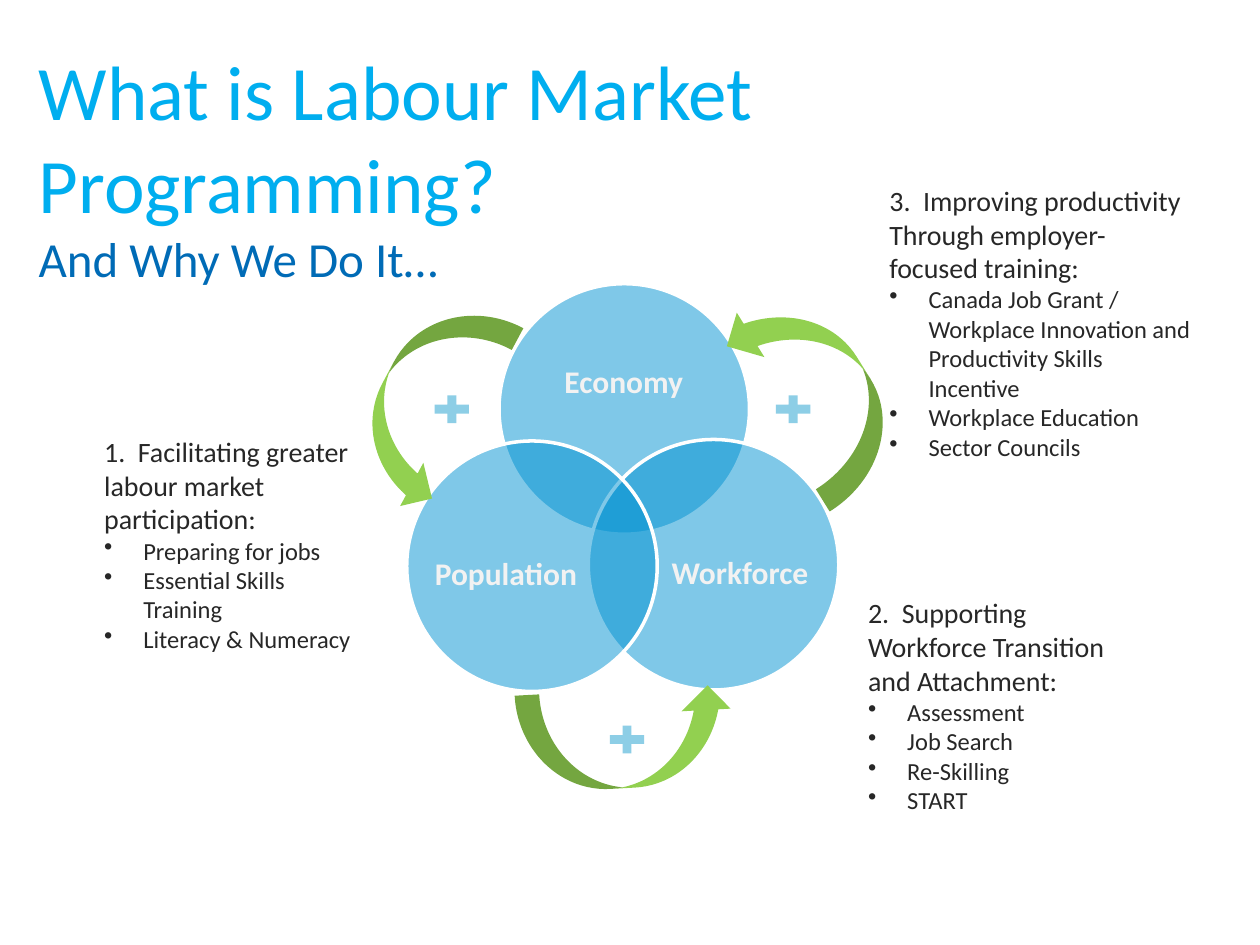
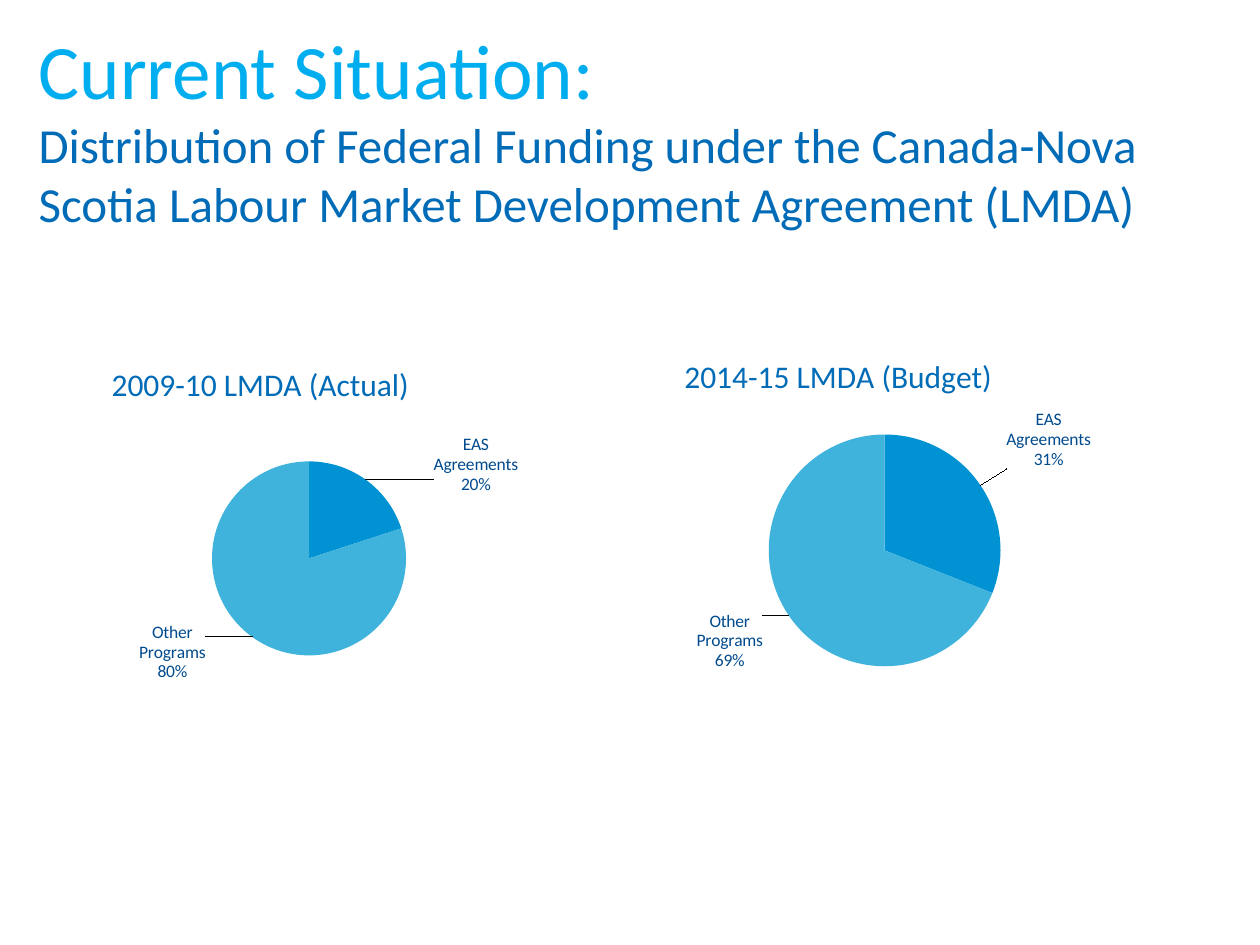
from dataclasses import dataclass

from pptx import Presentation
from pptx import util as u
from pptx.chart.data import CategoryChartData
from pptx.dml.color import RGBColor
from pptx.enum import chart as charts, shapes, text
from pptx.oxml import parse_xml
from pptx.oxml.ns import nsdecls, qn


@dataclass(frozen=True)
class Theme:
    font: str = "Calibri"
    title: str = "00AEEF"
    sub: str = "006BB6"
    body: str = "272727"
    pale: str = "F2F2F2"
    white: str = "FFFFFF"
    disc: str = "0092D2"
    arrow: str = "92D050"
    plus: str = "8DCEE6"
    label: str = "004B8E"
    slices: tuple = ("0092D2", "40B3DC")
    title_size: int = 44
    sub_size: int = 28
    head_size: int = 18
    lead_size: int = 16
    item_size: int = 14
    label_size: int = 10


T = Theme()


def lengths(*values):
    return [u.Cm(value) for value in values]


def style(font, size, color, bold=False):
    font.name, font.size, font.bold = T.font, u.Pt(size), bold
    font.color.rgb = RGBColor.from_string(color)


def say(para, words, size=T.item_size, color=T.body, bold=False, align=None,
        spacing=None, bullet=False):
    """Add a run to a paragraph and format both."""
    if bullet:
        props = para._p.get_or_add_pPr()
        indent = u.Cm(0.79)
        props.set("marL", str(indent))
        props.set("indent", str(-indent))
        props.append(parse_xml(f'<a:buChar {nsdecls("a")} char="•"/>'))
    run = para.add_run()
    run.text = words
    style(run.font, size, color, bold)
    if align is not None:
        para.alignment = align
    if spacing:
        para.line_spacing = spacing


def add_box(slide, *place):
    frame = slide.shapes.add_textbox(*lengths(*place)).text_frame
    frame.word_wrap = True
    return frame


def add_title(slide, place, main_text, sub_text):
    para = add_box(slide, *place).paragraphs[0]
    say(para, main_text, size=T.title_size, color=T.title)
    para.add_line_break()
    say(para, sub_text, size=T.sub_size, color=T.sub)


def add_form(slide, kind, place, color, turn=0):
    form = slide.shapes.add_shape(kind, *lengths(*place))
    form.shadow.inherit = False
    form.fill.solid()
    form.fill.fore_color.rgb = RGBColor.from_string(color)
    form.line.fill.background()
    form.rotation = turn
    return form


def add_disc(slide, left, top):
    """Add a half-transparent circle with a white rim."""
    size = 5.05
    disc = add_form(slide, shapes.MSO_SHAPE.OVAL, (left, top, size, size), T.disc)
    tint = disc._element.spPr.find(qn("a:solidFill"))[0]
    tint.append(parse_xml(f'<a:alpha {nsdecls("a")} val="50000"/>'))
    disc.line.color.rgb = RGBColor.from_string(T.white)
    disc.line.width = u.Pt(2)


def add_label(slide, words, place):
    frame = add_box(slide, *place)
    frame.margin_left = frame.margin_right = 0
    frame.margin_top = frame.margin_bottom = 0
    frame.vertical_anchor = text.MSO_ANCHOR.MIDDLE
    say(frame.paragraphs[0], words, size=T.head_size, color=T.pale, bold=True,
        align=text.PP_ALIGN.CENTER, spacing=0.9)


def add_list(slide, place, leads, items):
    frame = add_box(slide, *place)
    frame.auto_size = text.MSO_AUTO_SIZE.SHAPE_TO_FIT_TEXT
    for index, words in enumerate(leads + items):
        para = frame.add_paragraph() if index else frame.paragraphs[0]
        if index < len(leads):
            say(para, words, size=T.lead_size)
        else:
            say(para, words, bullet=True)


def layout_xml(**parts):
    inner = "".join(f'<c:{key} val="{val}"/>' for key, val in parts.items())
    return (f'<c:layout {nsdecls("c")}><c:manualLayout>{inner}'
            '</c:manualLayout></c:layout>')


def set_layout(parent, index, **parts):
    old = parent.find(qn("c:layout"))
    if old is not None:
        parent.remove(old)
    parent.insert(index, parse_xml(layout_xml(**parts)))


def label_xml(shifts):
    """Labels outside the pie, each moved by a share of the chart's size."""
    show = ('<c:dLblPos val="outEnd"/><c:showLegendKey val="0"/><c:showVal val="0"/>'
            '<c:showCatName val="1"/><c:showSerName val="0"/><c:showPercent val="1"/>'
            '<c:showBubbleSize val="0"/><c:separator>\n</c:separator>')
    form = '<c:numFmt formatCode="0%" sourceLinked="0"/>'
    moved = "".join(
        f'<c:dLbl><c:idx val="{index}"/>{layout_xml(x=x, y=y)}{form}{show}</c:dLbl>'
        for index, (x, y) in enumerate(shifts))
    return (f'<c:dLbls {nsdecls("c")}>{moved}{form}{show}'
            '<c:showLeaderLines val="1"/></c:dLbls>')


def add_pie(slide, place, title, values, title_x, plot, shifts):
    data = CategoryChartData()
    data.categories = ["EAS Agreements", "Other Programs"]
    data.add_series("Series 1", values)
    pie = slide.shapes.add_chart(charts.XL_CHART_TYPE.PIE, *lengths(*place), data).chart
    style(pie.font, T.label_size, T.label)
    pie.has_legend = False

    pie.has_title = True
    head = pie.chart_title
    say(head.text_frame.paragraphs[0], title, size=T.head_size, color=T.sub)
    set_layout(head._element, 1, xMode="edge", yMode="edge", x=title_x, y=0.09)

    x, y, wide, high = plot
    area = pie._chartSpace.chart.plotArea
    set_layout(area, 0, layoutTarget="inner", xMode="edge", yMode="edge",
               x=x, y=y, w=wide, h=high)

    pie.plots[0].vary_by_categories = True
    series = pie.plots[0].series[0]
    for index, color in enumerate(T.slices):
        fill = series.points[index].format.fill
        fill.solid()
        fill.fore_color.rgb = RGBColor.from_string(color)
    series._element.find(qn("c:cat")).addprevious(parse_xml(label_xml(shifts)))


def build_venn(slide):
    add_title(slide, (0.53, 0.76, 24.28, 3.18),
              "What is Labour Market Programming?", "And Why We Do It…")
    discs = [
        (10.06, 5.72, "Economy", (10.72, 6.6, 3.71, 2.26)),
        (11.86, 8.86, "Workforce", (13.41, 10.19, 3.02, 2.77)),
        (8.2, 8.89, "Population", (8.69, 10.21, 3.02, 2.77)),
    ]
    for left, top, words, place in discs:
        add_disc(slide, left, top)
        add_label(slide, words, place)

    arrows = [
        ((7.65, 5.89, 1.98, 4.39), 28.2),
        ((11.63, 12.7, 1.98, 4.39), 266.9),
        ((15.39, 5.64, 2.11, 4.45), 148.1),
    ]
    for place, turn in arrows:
        add_form(slide, shapes.MSO_SHAPE.CURVED_RIGHT_ARROW, place, T.arrow, turn)
    for left, top in ((8.64, 7.87), (12.17, 14.53), (15.52, 7.87)):
        add_form(slide, shapes.MSO_SHAPE.MATH_PLUS, (left, top, 0.94, 0.76), T.plus)

    add_list(slide, (17.68, 3.58, 6.6, 5.89),
             ["3.  Improving productivity", "Through employer-focused training:"],
             ["Canada Job Grant / Workplace Innovation and Productivity Skills Incentive",
              "Workplace Education", "Sector Councils"])
    add_list(slide, (1.85, 8.64, 5.72, 4.7),
             ["1.  Facilitating greater labour market participation:"],
             ["Preparing for jobs", "Essential Skills Training", "Literacy & Numeracy"])
    add_list(slide, (17.25, 11.89, 5.94, 4.7),
             ["2.  Supporting Workforce Transition and Attachment:"],
             ["Assessment", "Job Search", "Re-Skilling", "START"])


def build_funds(slide):
    add_title(slide, (0.53, 0.33, 24.64, 4.45), "Current Situation:",
              "Distribution of Federal Funding under the Canada-Nova Scotia "
              "Labour Market Development Agreement (LMDA)")
    add_pie(slide, (1.07, 6.45, 10.64, 8.15), "2009-10 LMDA (Actual)", (20, 80),
            title_x=0.1, plot=(0.3, 0.35, 0.37, 0.48),
            shifts=((0.12, 0.05), (-0.08, -0.05)))
    add_pie(slide, (12.98, 6.3, 10.01, 8.2), "2014-15 LMDA (Budget)", (31, 69),
            title_x=0.07, plot=(0.25, 0.3, 0.47, 0.57),
            shifts=((0.04, -0.03), (-0.04, -0.02)))


def main():
    deck = Presentation()
    deck.slide_width, deck.slide_height = lengths(25.4, 19.05)
    blank = deck.slide_layouts[6]
    for build in (build_venn, build_funds):
        build(deck.slides.add_slide(blank))
    deck.save("out.pptx")


if __name__ == "__main__":
    main()
